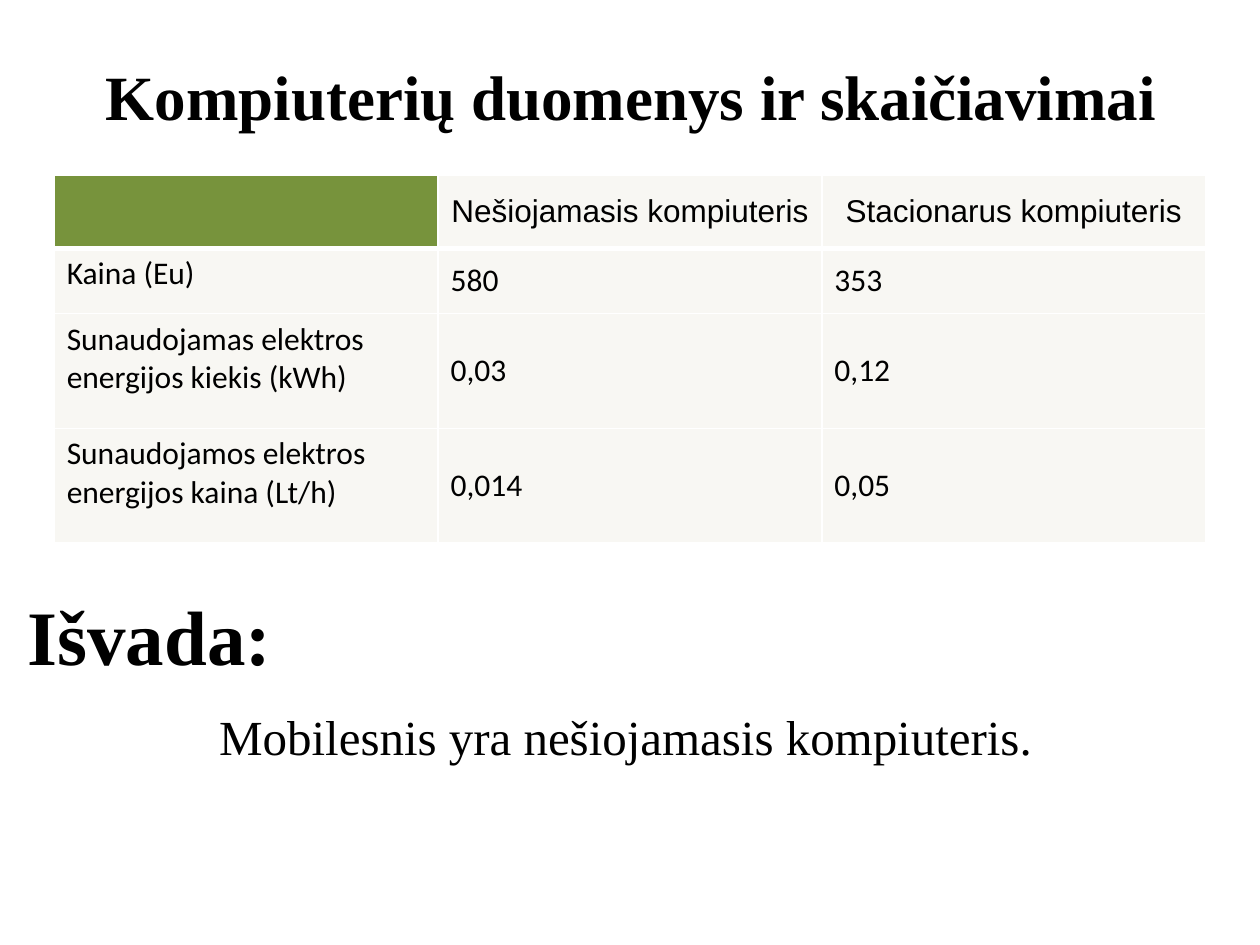
from lxml.etree import SubElement
from pptx import Presentation
from pptx.dml.color import RGBColor
from pptx.enum.text import MSO_ANCHOR as ANCHOR, PP_ALIGN as ALIGN
from pptx.oxml.ns import qn
from pptx.util import Inches, Pt

# Content
TITLE = "Kompiuterių duomenys ir skaičiavimai"
HEADING = "Išvada:"
CONCLUSION = "Mobilesnis yra nešiojamasis kompiuteris."
ROWS = [
    ("", "Nešiojamasis kompiuteris", "Stacionarus kompiuteris"),
    ("Kaina (Eu)", "580", "353"),
    ("Sunaudojamas elektros energijos kiekis (kWh)", "0,03", "0,12"),
    ("Sunaudojamos elektros energijos kaina (Lt/h)", "0,014", "0,05"),
]
ROW_HEIGHTS = [0.58, 0.52, 0.91, 0.91]
TABLE_LEFT, TABLE_TOP, TABLE_WIDTH = 0.43, 1.39, 9.14

COLORS = {"text": "000000", "corner": "77933C", "cell": "F8F7F3", "rule": "FFFFFF"}
SERIF = "Times New Roman"
FORMATS = {
    "title": {"name": SERIF, "size": Pt(36), "bold": True},
    "heading": {"name": SERIF, "size": Pt(44), "bold": True},
    "conclusion": {"name": SERIF, "size": Pt(28), "bold": False},
    "header": {"name": "Arial", "size": Pt(18), "bold": False},
    "body": {"name": "Calibri", "size": Pt(18), "bold": False},
}


def write(tf, text, style, align=ALIGN.LEFT):
    p = tf.paragraphs[0]
    p.alignment = align
    r = p.add_run()
    r.text = text
    for key, value in FORMATS[style].items():
        setattr(r.font, key, value)
    r.font.color.rgb = RGBColor.from_string(COLORS["text"])
    return p


def place(sp, left, top, width, height, anchor):
    sp.left, sp.top, sp.width, sp.height = map(Inches, (left, top, width, height))
    tf = sp.text_frame
    tf.word_wrap = True
    tf.vertical_anchor = anchor
    return tf


def add_borders(cell, **widths):
    tcPr = cell._tc.get_or_add_tcPr()
    for side, width in widths.items():
        ln = SubElement(tcPr, qn(f"a:ln{side}"), w=str(Pt(width)))
        fill = SubElement(ln, qn("a:solidFill"))
        SubElement(fill, qn("a:srgbClr"), val=COLORS["rule"])


prs = Presentation()
prs.slide_width, prs.slide_height = Inches(10), Inches(7.5)
s = prs.slides.add_slide(prs.slide_layouts[1])
title, body = s.placeholders

# Title
write(place(title, 0.51, 0.13, 9, 1.25, ANCHOR.MIDDLE), TITLE, "title", ALIGN.CENTER)

# Comparison table
table = s.shapes.add_table(
    len(ROWS), len(ROWS[0]), Inches(TABLE_LEFT), Inches(TABLE_TOP),
    Inches(TABLE_WIDTH), Inches(sum(ROW_HEIGHTS))).table
table.first_row = table.horz_banding = False
for row, height in zip(table.rows, ROW_HEIGHTS):
    row.height = Inches(height)
for i, row in enumerate(ROWS):
    for j, text in enumerate(row):
        cell = table.cell(i, j)
        add_borders(cell, L=1, R=1, T=3 if i == 1 else 1, B=3 if i == 0 else 1)
        cell.fill.solid()
        color = COLORS["cell" if i or j else "corner"]
        cell.fill.fore_color.rgb = RGBColor.from_string(color)
        cell.vertical_anchor = ANCHOR.MIDDLE if j else ANCHOR.TOP
        if text:
            style, align = ("body", ALIGN.LEFT) if i else ("header", ALIGN.CENTER)
            write(cell.text_frame, text, style, align)

# Conclusion text, indented without a bullet
tf = place(body, 0.28, 5.56, 8.83, 1.24, ANCHOR.TOP)
pPr = tf.paragraphs[0]._p.get_or_add_pPr()
pPr.set("marL", str(Inches(1.36)))
pPr.set("indent", "0")
SubElement(pPr, qn("a:buNone"))
write(tf, CONCLUSION, "conclusion").space_before = Pt(0)

# Conclusion heading
box = s.shapes.add_textbox(0, 0, 0, 0)
p = write(place(box, 0.12, 4.69, 9, 0.78, ANCHOR.MIDDLE), HEADING, "heading")
p.line_spacing = 0.9

prs.save("out.pptx")
